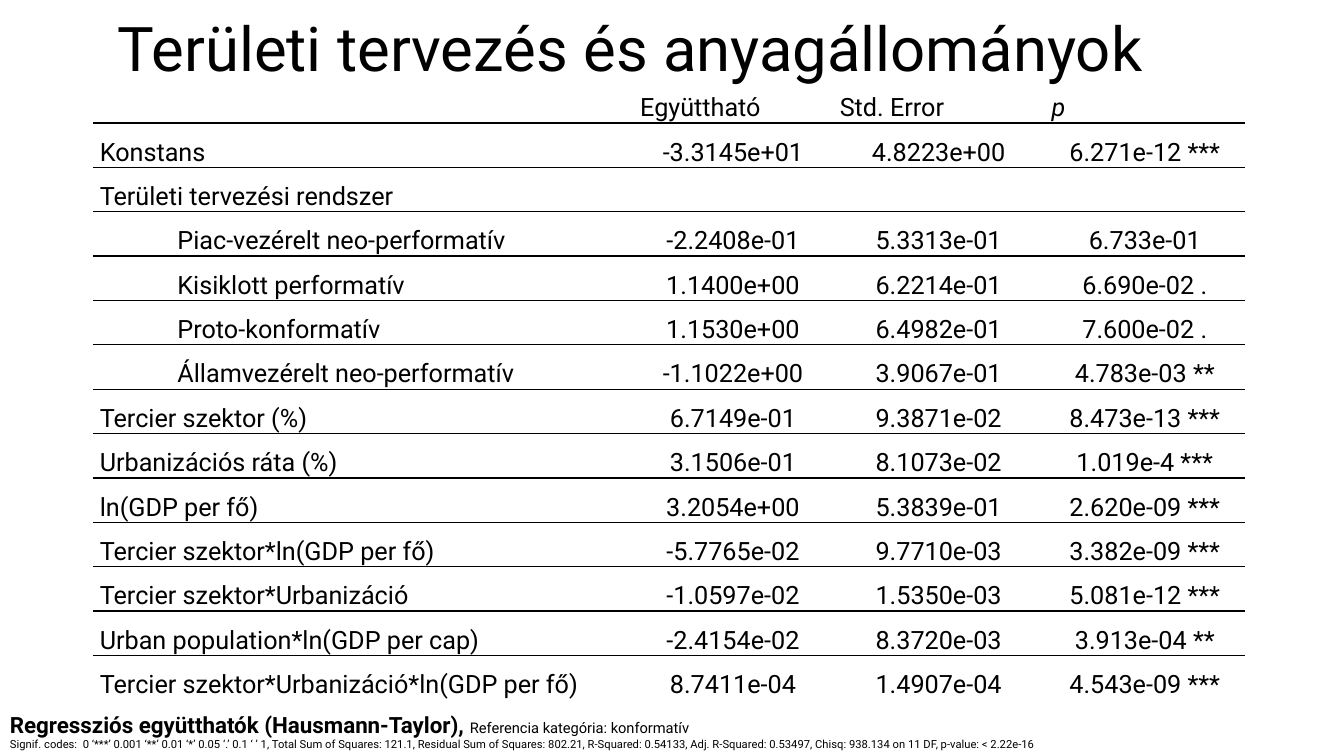
from dataclasses import dataclass

import pptx
import pptx.dml.color
import pptx.enum.text
import pptx.oxml
import pptx.oxml.ns
import pptx.table
import pptx.text.text
import pptx.util

Inches = pptx.util.Inches
Pt = pptx.util.Pt
Align = pptx.enum.text.PP_ALIGN
Anchor = pptx.enum.text.MSO_ANCHOR


@dataclass(frozen=True)
class Theme:
    font: str = "Roboto"
    ink: str = "000000"
    title: float = 44
    body: float = 18
    caption: float = 16
    reference: float = 10.5
    note: float = 8
    rule: float = 1


@dataclass(frozen=True)
class Term:
    label: str
    coefficient: str = ""
    error: str = ""
    p_value: str = ""
    indented: bool = False


THEME = Theme()
COLUMN_WIDTHS = (0.77, 4.59, 1.98, 2.1, 1.99)
ROW_HEIGHT = 0.44
HEADINGS = ("Együttható", "Std. Error", "p")
TERMS = (
    Term("Konstans", "-3.3145e+01", "4.8223e+00", "6.271e-12 ***"),
    Term("Területi tervezési rendszer"),
    Term("Piac-vezérelt neo-performatív", "-2.2408e-01", "5.3313e-01", "6.733e-01", True),
    Term("Kisiklott performatív", "1.1400e+00", "6.2214e-01", "6.690e-02 .", True),
    Term("Proto-konformatív", "1.1530e+00", "6.4982e-01", "7.600e-02 .", True),
    Term("Államvezérelt neo-performatív", "-1.1022e+00", "3.9067e-01", "4.783e-03 **", True),
    Term("Tercier szektor (%)", "6.7149e-01", "9.3871e-02", "8.473e-13 ***"),
    Term("Urbanizációs ráta (%)", "3.1506e-01", "8.1073e-02", "1.019e-4 ***"),
    Term("ln(GDP per fő)", "3.2054e+00", "5.3839e-01", "2.620e-09 ***"),
    Term("Tercier szektor*ln(GDP per fő)", "-5.7765e-02", "9.7710e-03", "3.382e-09 ***"),
    Term("Tercier szektor*Urbanizáció", "-1.0597e-02", "1.5350e-03", "5.081e-12 ***"),
    Term("Urban population*ln(GDP per cap)", "-2.4154e-02", "8.3720e-03", "3.913e-04 **"),
    Term("Tercier szektor*Urbanizáció*ln(GDP per fő)", "8.7411e-04", "1.4907e-04", "4.543e-09 ***"),
)


def style_font(font: pptx.text.text.Font, size: float) -> None:
    font.name = THEME.font
    font.size = Pt(size)
    font.color.rgb = pptx.dml.color.RGBColor.from_string(THEME.ink)


def set_borders(cell: pptx.table._Cell, ruled_sides: str) -> None:
    """Rule the given sides (letters out of LRTB) and clear the others."""
    properties = cell._tc.get_or_add_tcPr()
    for side in "LRTB":
        if side in ruled_sides:
            fill = f'<a:solidFill><a:srgbClr val="{THEME.ink}"/></a:solidFill>'
        else:
            fill = "<a:noFill/>"
        properties.append(pptx.oxml.parse_xml(
            f'<a:ln{side} {pptx.oxml.ns.nsdecls("a")} w="{Pt(THEME.rule)}">{fill}</a:ln{side}>'))


def write_cell(cell: pptx.table._Cell, text: str, align: Align) -> None:
    cell.text = text
    paragraph = cell.text_frame.paragraphs[0]
    paragraph.alignment = align
    paragraph.line_spacing = 1.5
    paragraph.space_after = Pt(8)
    style_font(paragraph.font, THEME.body)


def add_title(slide: pptx.slide.Slide) -> None:
    title = slide.shapes.title
    title.left, title.top = Inches(1.07), Inches(-0.21)
    title.width, title.height = Inches(11.5), Inches(1.45)
    title.text_frame.text = "Területi tervezés és anyagállományok"
    title.text_frame.vertical_anchor = Anchor.MIDDLE
    paragraph = title.text_frame.paragraphs[0]
    paragraph.alignment = Align.LEFT
    paragraph.line_spacing = 0.9
    style_font(paragraph.font, THEME.title)


def add_regression_table(slide: pptx.slide.Slide) -> None:
    row_count = len(TERMS) + 1
    table = slide.shapes.add_table(
        row_count, len(COLUMN_WIDTHS), Inches(0.92), Inches(0.78),
        Inches(sum(COLUMN_WIDTHS)), Inches(ROW_HEIGHT * row_count)).table
    table.first_row = table.horz_banding = False
    for column, width in zip(table.columns, COLUMN_WIDTHS):
        column.width = Inches(width)

    # Rules between rows, none on the outside
    for index, row in enumerate(table.rows):
        row.height = Inches(ROW_HEIGHT)
        ruled_sides = ("T" if index > 0 else "") + ("B" if index < row_count - 1 else "")
        for cell in row.cells:
            cell.margin_left = cell.margin_right = Inches(0.07)
            cell.margin_top = cell.margin_bottom = 0
            set_borders(cell, ruled_sides)
            cell.fill.background()

    # Headings
    table.cell(0, 0).merge(table.cell(0, 1))
    for column, heading in enumerate(HEADINGS, start=2):
        write_cell(table.cell(0, column), heading, Align.JUSTIFY)
    table.cell(0, 4).text_frame.paragraphs[0].runs[0].font.italic = True

    # Model terms
    for index, term in enumerate(TERMS, start=1):
        if not term.indented:
            table.cell(index, 0).merge(table.cell(index, 1))
        write_cell(table.cell(index, int(term.indented)), term.label, Align.LEFT)
        for column, value in enumerate((term.coefficient, term.error, term.p_value), start=2):
            if value:
                write_cell(table.cell(index, column), value, Align.CENTER)


def add_footer(slide: pptx.slide.Slide) -> None:
    footer = slide.shapes.add_textbox(0, Inches(7), Inches(13.26), Inches(0.5)).text_frame
    footer.word_wrap = True
    footer.auto_size = pptx.enum.text.MSO_AUTO_SIZE.SHAPE_TO_FIT_TEXT
    footer.vertical_anchor = Anchor.MIDDLE

    caption = footer.paragraphs[0]
    caption.alignment = Align.JUSTIFY
    for text, size, bold in (
        ("Regressziós együtthatók (Hausmann-Taylor), ", THEME.caption, True),
        ("Referencia kategória: konformatív", THEME.reference, False),
    ):
        run = caption.add_run()
        run.text = text
        run.font.bold = bold
        style_font(run.font, size)

    note = footer.add_paragraph()
    note.alignment = Align.JUSTIFY
    note.text = (
        "Signif. codes:  0 ‘***’ 0.001 ‘**’ 0.01 ‘*’ 0.05 ‘.’ 0.1 ‘ ’ 1, "
        "Total Sum of Squares: 121.1, Residual Sum of Squares: 802.21, "
        "R-Squared: 0.54133, Adj. R-Squared: 0.53497, "
        "Chisq: 938.134 on 11 DF, p-value: < 2.22e-16")
    style_font(note.font, THEME.note)


def main() -> None:
    presentation = pptx.Presentation()
    presentation.slide_width = Inches(13.33)
    presentation.slide_height = Inches(7.5)
    slide = presentation.slides.add_slide(presentation.slide_layouts[5])
    add_title(slide)
    add_regression_table(slide)
    add_footer(slide)
    presentation.save("out.pptx")


if __name__ == "__main__":
    main()
